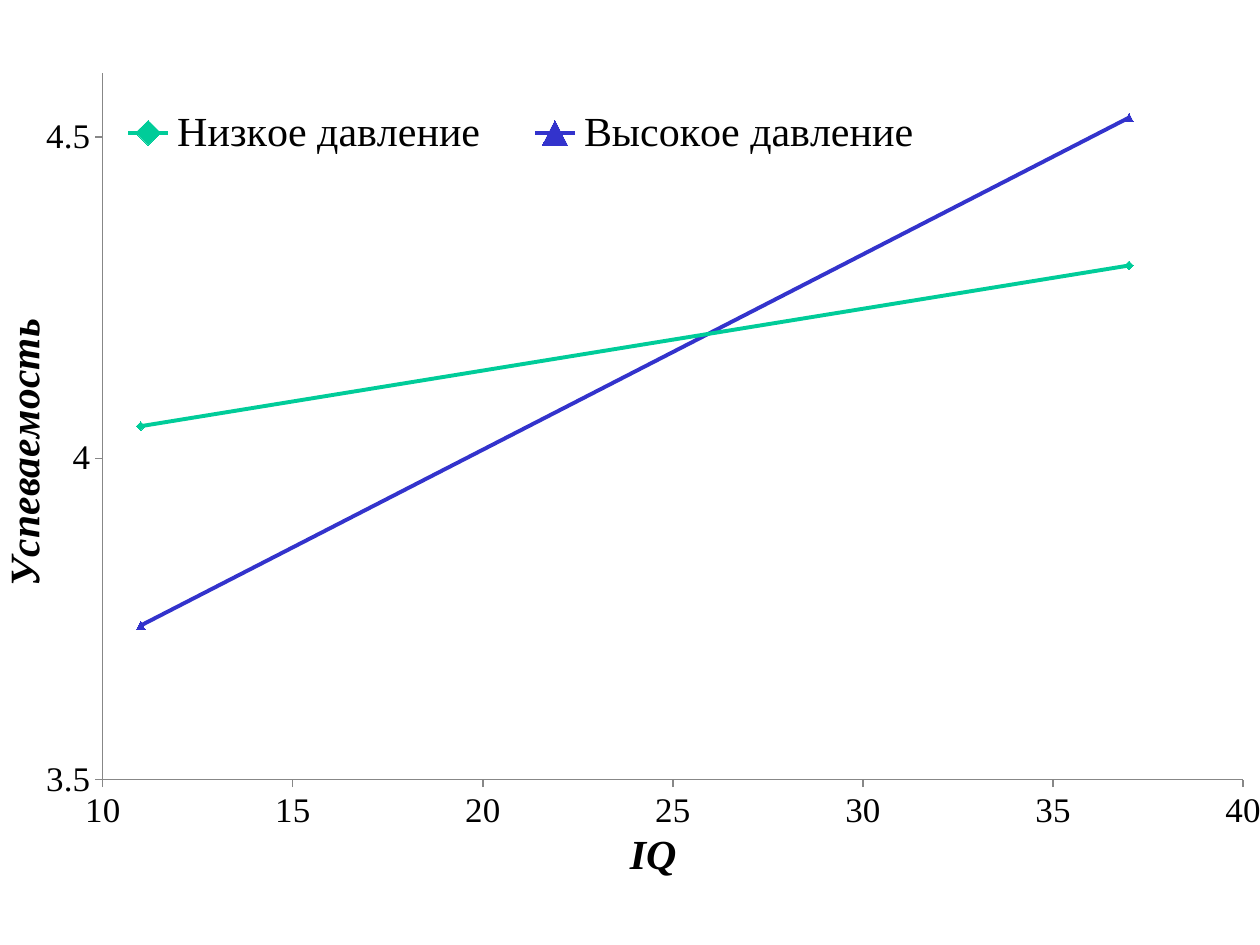
from lxml import etree
from pptx import Presentation
from pptx.chart.data import XyChartData
from pptx.dml.color import RGBColor
from pptx.enum import chart as ch
from pptx.oxml import ns
from pptx.util import Pt


def color(hex_value):
    return RGBColor.from_string(hex_value)


def apply(target, values):
    for name, value in values.items():
        setattr(target, name, value)


def place(element, index, target=None, **fractions):
    tag = ns.qn("c:layout")
    for old in element.findall(tag):
        element.remove(old)
    layout = etree.Element(tag)
    manual = etree.SubElement(layout, ns.qn("c:manualLayout"))
    values = {"layoutTarget": target} if target else {}
    values.update(xMode="edge", yMode="edge", **fractions)
    for name, value in values.items():
        etree.SubElement(manual, ns.qn(f"c:{name}")).set("val", str(value))
    element.insert(index, layout)


class ChartSlide:
    font = "Times New Roman"
    ink = "000000"
    axis_ink = "878787"

    def __init__(self, deck):
        self.slide = deck.slides.add_slide(deck.slide_layouts[6])

    def style_font(self, font, size, **extra):
        apply(font, dict(name=self.font, size=Pt(size), **extra))
        font.color.rgb = color(self.ink)

    def scatter(self, left, top, width, height, iq, lines):
        data = XyChartData()
        for name, grades, _, _ in lines:
            series = data.add_series(name)
            for x, y in zip(iq, grades):
                series.add_data_point(x, y)
        frame = self.slide.shapes.add_chart(
            ch.XL_CHART_TYPE.XY_SCATTER_LINES,
            Pt(left), Pt(top), Pt(width), Pt(height), data)
        chart = frame.chart
        chart.has_title = False
        self.style_font(chart.font, 10)
        plot = chart.plots[0]
        plot.vary_by_categories = False
        for series, (_, _, ink, marker) in zip(plot.series, lines):
            self.series(series, ink, marker)
        plot_area = chart.element.find(".//" + ns.qn("c:plotArea"))
        place(plot_area, 0, "inner", x=0.089, y=0.024, w=0.889, h=0.858)
        return chart

    def series(self, series, ink, marker):
        series.smooth = False
        series.format.line.width = Pt(2.25)
        series.format.line.color.rgb = color(ink)
        apply(series.marker, dict(style=marker, size=5))
        fmt = series.marker.format
        fmt.fill.solid()
        fmt.fill.fore_color.rgb = color(ink)
        fmt.line.color.rgb = color(ink)

    def axis(self, axis, title, x, y, rotation=0, **scale):
        apply(axis, dict(
            has_major_gridlines=False, has_minor_gridlines=False,
            major_tick_mark=ch.XL_TICK_MARK.OUTSIDE,
            minor_tick_mark=ch.XL_TICK_MARK.NONE, **scale))
        axis.format.line.color.rgb = color(self.axis_ink)
        axis.format.line.width = Pt(0.75)
        self.style_font(axis.tick_labels.font, 20)
        apply(axis.tick_labels, dict(
            number_format="General", number_format_is_linked=False))
        frame = axis.axis_title.text_frame
        frame.text = title
        run = frame.paragraphs[0].runs[0]
        self.style_font(run.font, 24, bold=True, italic=True)
        body = axis.axis_title._element.find(".//" + ns.qn("a:bodyPr"))
        body.set("rot", str(rotation * 60000))
        body.set("vert", "horz")
        place(axis.axis_title._element, 1, x=x, y=y)

    def legend(self, chart, **fractions):
        chart.has_legend = True
        apply(chart.legend, dict(
            position=ch.XL_LEGEND_POSITION.RIGHT, include_in_layout=False))
        self.style_font(chart.legend.font, 24)
        place(chart.legend._element, 1, **fractions)


def main():
    deck = Presentation()
    apply(deck, dict(slide_width=Pt(720), slide_height=Pt(540)))
    page = ChartSlide(deck)
    markers = ch.XL_MARKER_STYLE
    pressure_lines = [
        ("Низкое давление", (4.05, 4.3), "00CC99", markers.DIAMOND),
        ("Высокое давление", (3.74, 4.53), "3333CC", markers.TRIANGLE),
    ]
    chart = page.scatter(-6.5, 30.25, 733, 478.8, (11, 37), pressure_lines)
    page.axis(chart.category_axis, "IQ", 0.494, 0.93,
              minimum_scale=10, maximum_scale=40, major_unit=5)
    page.axis(chart.value_axis, "Успеваемость", 0, 0.318, rotation=-90,
              minimum_scale=3.5, maximum_scale=4.6, major_unit=0.5)
    page.legend(chart, x=0.077, y=0.057, w=0.676, h=0.08)
    deck.save("out.pptx")


if __name__ == "__main__":
    main()
